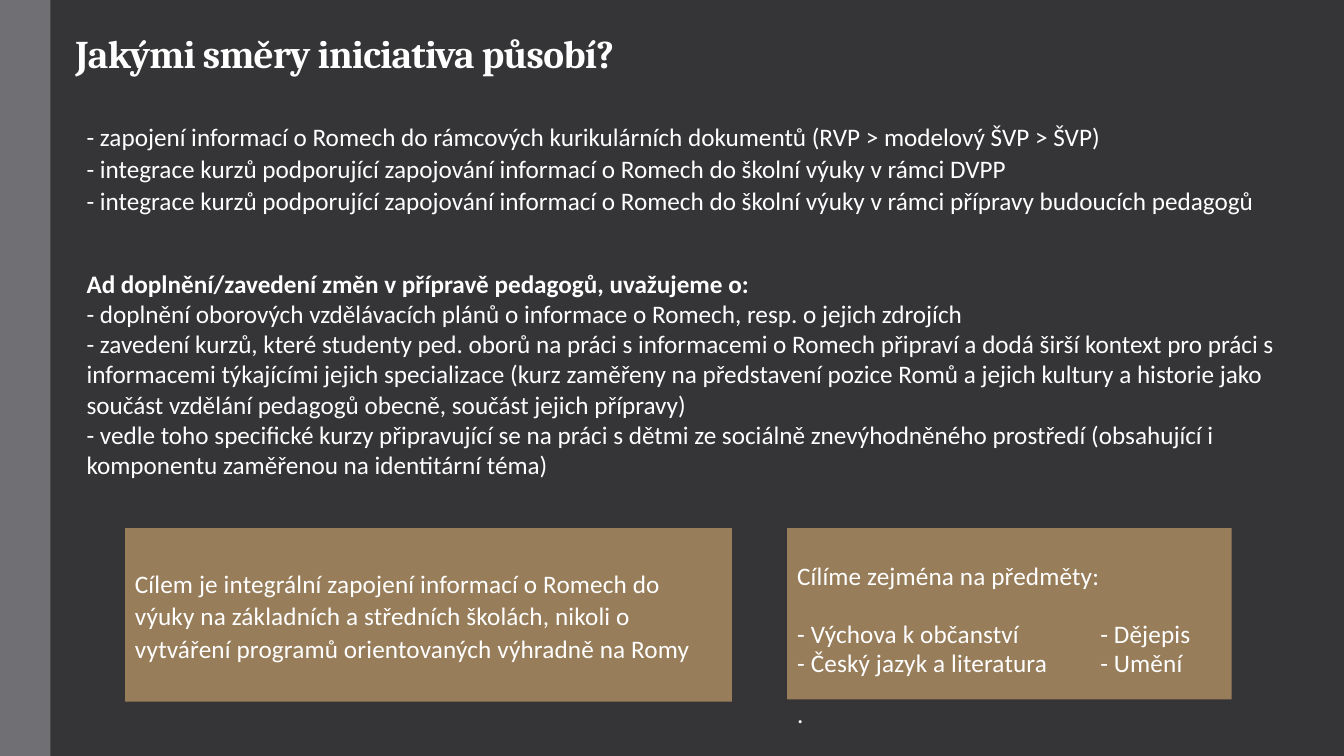
from pptx import Presentation
from pptx.dml.color import RGBColor
from pptx.enum.shapes import MSO_SHAPE
from pptx.enum.text import MSO_ANCHOR, PP_ALIGN
from pptx.oxml.xmlchemy import OxmlElement
from pptx.util import Pt

TITLE = "Jakými směry iniciativa působí?"

DIRECTIONS = [
    "- zapojení informací o Romech do rámcových kurikulárních dokumentů (RVP > modelový ŠVP > ŠVP)",
    "- integrace kurzů podporující zapojování informací o Romech do školní výuky v rámci DVPP",
    "- integrace kurzů podporující zapojování informací o Romech do školní výuky v rámci přípravy budoucích pedagogů",
]

CHANGES_HEADING = "Ad doplnění/zavedení změn v přípravě pedagogů, uvažujeme o:"
CHANGES = [
    "- doplnění oborových vzdělávacích plánů o informace o Romech, resp. o jejich zdrojích",
    "- zavedení kurzů, které studenty ped. oborů na práci s informacemi o Romech připraví a dodá širší kontext "
    "pro práci s informacemi týkajícími jejich specializace (kurz zaměřeny na představení pozice Romů a jejich "
    "kultury a historie jako součást vzdělání pedagogů obecně, součást jejich přípravy)",
    "- vedle toho specifické kurzy připravující se na práci s dětmi ze sociálně znevýhodněného prostředí "
    "(obsahující i komponentu zaměřenou na identitární téma)",
]

GOAL = (
    "Cílem je integrální zapojení informací o Romech do výuky na základních a středních školách, "
    "nikoli o vytváření programů orientovaných výhradně na Romy"
)

SUBJECTS_HEADING = "Cílíme zejména na předměty:"
SUBJECTS = [
    ("- Výchova k občanství", "- Dějepis"),
    ("- Český jazyk a literatura", "- Umění"),
]
SUBJECTS_END = "."

THEME = {
    "background": RGBColor(0x35, 0x35, 0x37),
    "band": RGBColor(0x6F, 0x6F, 0x74),
    "card": RGBColor(0x98, 0x7D, 0x5A),
    "text": RGBColor(0xFF, 0xFF, 0xFF),
    "title_font": "Cambria",
    "body_font": "Calibri",
    "title_size": 28,
    "body_size": 18,
}

SLIDE_W, SLIDE_H = 960, 540
BODY_LEFT = 54.72
CARD_TOP = 377.28
SUBJECT_TAB = 216.5
SUBJECT_LINE = 20.9


def add_panel(slide, left, top, width, height, fill):
    panel = slide.shapes.add_shape(MSO_SHAPE.RECTANGLE, Pt(left), Pt(top), Pt(width), Pt(height))
    panel.shadow.inherit = False
    panel.fill.solid()
    panel.fill.fore_color.rgb = fill
    panel.line.fill.background()
    return panel


def prepare_frame(shape, anchor=MSO_ANCHOR.TOP, inset_top=3.6):
    frame = shape.text_frame
    frame.word_wrap = True
    frame.vertical_anchor = anchor
    frame.margin_left = frame.margin_right = Pt(7.2)
    frame.margin_top, frame.margin_bottom = Pt(inset_top), Pt(3.6)
    return frame


def add_text_area(slide, left, top, width, height, anchor=MSO_ANCHOR.TOP):
    area = slide.shapes.add_textbox(Pt(left), Pt(top), Pt(width), Pt(height))
    return prepare_frame(area, anchor)


def add_card(slide, left, width, height, inset_top):
    card = add_panel(slide, left, CARD_TOP, width, height, THEME["card"])
    return prepare_frame(card, inset_top=inset_top)


def write(frame, text, level="body", bold=False, spacing=1.0, before=0, tracking=0):
    first = frame.paragraphs[0]
    paragraph = frame.add_paragraph() if first.runs else first
    paragraph.alignment = PP_ALIGN.LEFT
    paragraph.line_spacing = spacing
    paragraph.space_before = Pt(before)
    paragraph.space_after = Pt(0)
    run = paragraph.add_run()
    run.text = text
    run.font.name = THEME[level + "_font"]
    run.font.size = Pt(THEME[level + "_size"])
    run.font.bold = bold
    run.font.color.rgb = THEME["text"]
    if tracking:
        run._r.get_or_add_rPr().set("spc", str(round(tracking * 100)))
    return paragraph


def set_tab(paragraph, position):
    tabs = OxmlElement("a:tabLst")
    tab = OxmlElement("a:tab")
    tab.set("pos", str(int(Pt(position))))
    tab.set("algn", "l")
    tabs.append(tab)
    paragraph._p.get_or_add_pPr().append(tabs)


def main():
    deck = Presentation()
    deck.slide_width, deck.slide_height = Pt(SLIDE_W), Pt(SLIDE_H)
    slide = deck.slides.add_slide(deck.slide_layouts[6])
    slide.background.fill.solid()
    slide.background.fill.fore_color.rgb = THEME["background"]

    add_panel(slide, 0, 0, 36, SLIDE_H, THEME["band"])

    title = add_text_area(slide, 46.8, 18, 880.56, 40.32, MSO_ANCHOR.BOTTOM)
    write(title, TITLE, "title", bold=True, spacing=0.85, tracking=-0.5)

    goal = add_card(slide, 89.28, 433.44, 123.84, inset_top=27)
    write(goal, GOAL, spacing=1.07, tracking=0.1)

    subjects = add_card(slide, 562.32, 317.52, 122.4, inset_top=24.5)
    subject_style = {"spacing": 0.95, "tracking": 0.1}
    write(subjects, SUBJECTS_HEADING, **subject_style)
    for row, pair in enumerate(SUBJECTS):
        before = 0 if row else SUBJECT_LINE
        line = write(subjects, "\t".join(pair), before=before, **subject_style)
        set_tab(line, SUBJECT_TAB)
    write(subjects, SUBJECTS_END, before=16, **subject_style)

    directions = add_text_area(slide, BODY_LEFT, 81.36, 874.8, 77.04)
    for direction in DIRECTIONS:
        write(directions, direction, spacing=1.07)

    changes = add_text_area(slide, BODY_LEFT, 187.92, 879.84, 159.84)
    write(changes, CHANGES_HEADING, bold=True)
    for change in CHANGES:
        write(changes, change)

    deck.save("out.pptx")


if __name__ == "__main__":
    main()
